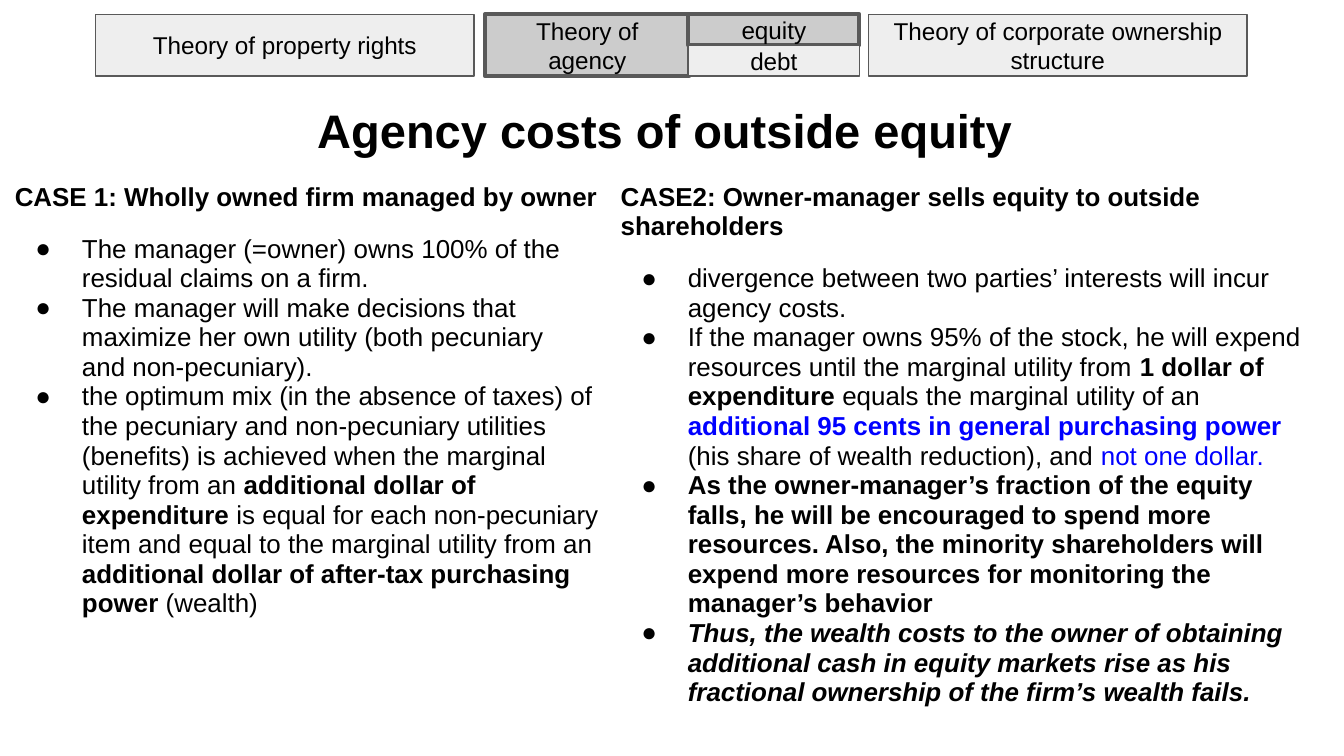
from lxml.etree import SubElement
from pptx import Presentation
from pptx.dml.color import RGBColor
from pptx.enum.shapes import MSO_SHAPE
from pptx.enum.text import MSO_ANCHOR, MSO_AUTO_SIZE, PP_ALIGN
from pptx.oxml.ns import qn
from pptx.util import Cm, Pt

FONT, BLACK, BLUE, BORDER = "Arial", "000000", "0000FF", "595959"
LIGHT, ACTIVE = ("EEEEEE", 0.75), ("CCCCCC", 2.25)
BOLD, BOLD_ITALIC = {"bold": True}, {"bold": True, "italic": True}
BLUE_BOLD = {"bold": True, "color": BLUE}

TITLE = "Agency costs of outside equity"
NAV_TOP, NAV_HEIGHT = 0.27, 1.17
NAV = [
    ("Theory of property rights", 1.8, 7.16, 0, 1, LIGHT),
    ("Theory of agency", 9.17, 3.86, 0, 1, ACTIVE),
    ("Theory of corporate ownership structure", 16.41, 7.16, 0, 1, LIGHT),
    ("equity", 13.01, 3.23, 0, 0.5, ACTIVE),
    ("debt", 13.01, 3.23, 0.5, 0.5, LIGHT),
]
CASES = [
    ("CASE 1: Wholly owned firm managed by owner", (0.03, 3.2, 11.68, 9.5), [
        [("The manager (=owner) owns 100% of the residual claims on a firm.", {})],
        [("The manager will make decisions that maximize her own utility "
          "(both pecuniary\nand non-pecuniary).", {})],
        [("the optimum mix (in the absence of taxes) of the pecuniary and "
          "non-pecuniary utilities (benefits) is achieved when the marginal "
          "utility from an ", {}),
         ("additional dollar of expenditure ", BOLD),
         ("is equal for each non-pecuniary item and equal to the marginal "
          "utility from an ", {}),
         ("additional dollar of after-tax purchasing power", BOLD),
         (" (wealth)", {})],
    ]),
    ("CASE2: Owner-manager sells equity to outside shareholders",
     (11.48, 3.2, 13.46, 10.57), [
        [("divergence between two parties’ interests will incur agency costs.", {})],
        [("If the manager owns 95% of the stock, he will expend resources "
          "until the marginal utility from ", {}),
         ("1 dollar of expenditure ", BOLD),
         ("equals the marginal utility of an ", {}),
         ("additional 95 cents in general purchasing power ", BLUE_BOLD),
         ("(his share of wealth reduction), and ", {}),
         ("not one dollar.", {"color": BLUE})],
        [("As the owner-manager’s fraction of the equity falls, he will be "
          "encouraged to spend more resources. Also, the minority shareholders "
          "will expend more resources for monitoring the manager’s behavior", BOLD)],
        [("Thus, the wealth costs to the owner of obtaining additional cash in "
          "equity markets rise as his fractional ownership of the firm’s wealth "
          "fails.", BOLD_ITALIC)],
     ]),
]


def rgb(color):
    """Turn a hex string into a colour."""
    return RGBColor.from_string(color)


def add_text(paragraph, text, size, color=BLACK, bold=False, italic=False):
    """Add a formatted run for each line of the text."""
    for number, line in enumerate(text.split("\n")):
        if number:
            paragraph.add_line_break()
        run = paragraph.add_run()
        run.text = line
        font = run.font
        font.name, font.size, font.bold, font.italic = FONT, Pt(size), bold, italic
        font.color.rgb = rgb(color)


def prepare_frame(shape, anchor):
    """Set wrapping, insets and anchor, and return the text frame."""
    frame = shape.text_frame
    frame.word_wrap, frame.auto_size = True, MSO_AUTO_SIZE.NONE
    frame.vertical_anchor = anchor
    frame.margin_left = frame.margin_right = Cm(0.25)
    frame.margin_top = frame.margin_bottom = Cm(0.25)
    return frame


def add_bullet(paragraph):
    """Give the paragraph a round bullet and a hanging indent."""
    properties = paragraph._p.get_or_add_pPr()
    properties.set("marL", str(Cm(1.27)))
    properties.set("indent", str(Cm(-0.88)))
    bullet_color = SubElement(properties, qn("a:buClr"))
    SubElement(bullet_color, qn("a:srgbClr"), val=BLACK)
    SubElement(properties, qn("a:buFont"), typeface=FONT)
    SubElement(properties, qn("a:buChar"), char="●")


def place_title(slide):
    """Place and format the title."""
    title = slide.shapes.title
    title.left, title.top, title.width, title.height = map(Cm, (-0.25, 1.65, 25.63, 1.6))
    paragraph = prepare_frame(title, MSO_ANCHOR.MIDDLE).paragraphs[0]
    paragraph.alignment = PP_ALIGN.CENTER
    add_text(paragraph, TITLE, 25.2, bold=True)


def add_case(slide, heading, place, points):
    """Add a heading with its bullet points."""
    box = slide.shapes.add_textbox(*map(Cm, place))
    frame = prepare_frame(box, MSO_ANCHOR.TOP)
    add_text(frame.paragraphs[0], heading, 13.9, bold=True)
    for number, point in enumerate(points):
        paragraph = frame.add_paragraph()
        paragraph.space_before = Pt(0 if number else 12)
        for text, style in point:
            add_text(paragraph, text, 13.9, **style)
    for number, paragraph in enumerate(frame.paragraphs):
        paragraph.line_spacing = 0.95
        if number:
            add_bullet(paragraph)


def add_nav_box(slide, label, left, width, offset, share, look):
    """Add one box of the navigation bar."""
    fill, line_width = look
    box = slide.shapes.add_shape(
        MSO_SHAPE.FLOWCHART_PROCESS, Cm(left), Cm(NAV_TOP + offset * NAV_HEIGHT),
        Cm(width), Cm(share * NAV_HEIGHT))
    box.shadow.inherit = False
    box.fill.solid()
    box.fill.fore_color.rgb = rgb(fill)
    box.line.color.rgb = rgb(BORDER)
    box.line.width = Pt(line_width)
    paragraph = prepare_frame(box, MSO_ANCHOR.MIDDLE).paragraphs[0]
    paragraph.alignment = PP_ALIGN.CENTER
    add_text(paragraph, label, 13)


def main():
    """Build the slide and save it."""
    deck = Presentation()
    deck.slide_width, deck.slide_height = Cm(25.4), Cm(14.29)
    slide = deck.slides.add_slide(deck.slide_layouts[5])
    place_title(slide)
    for case in CASES:
        add_case(slide, *case)
    for box in NAV:
        add_nav_box(slide, *box)
    deck.save("out.pptx")


if __name__ == "__main__":
    main()
